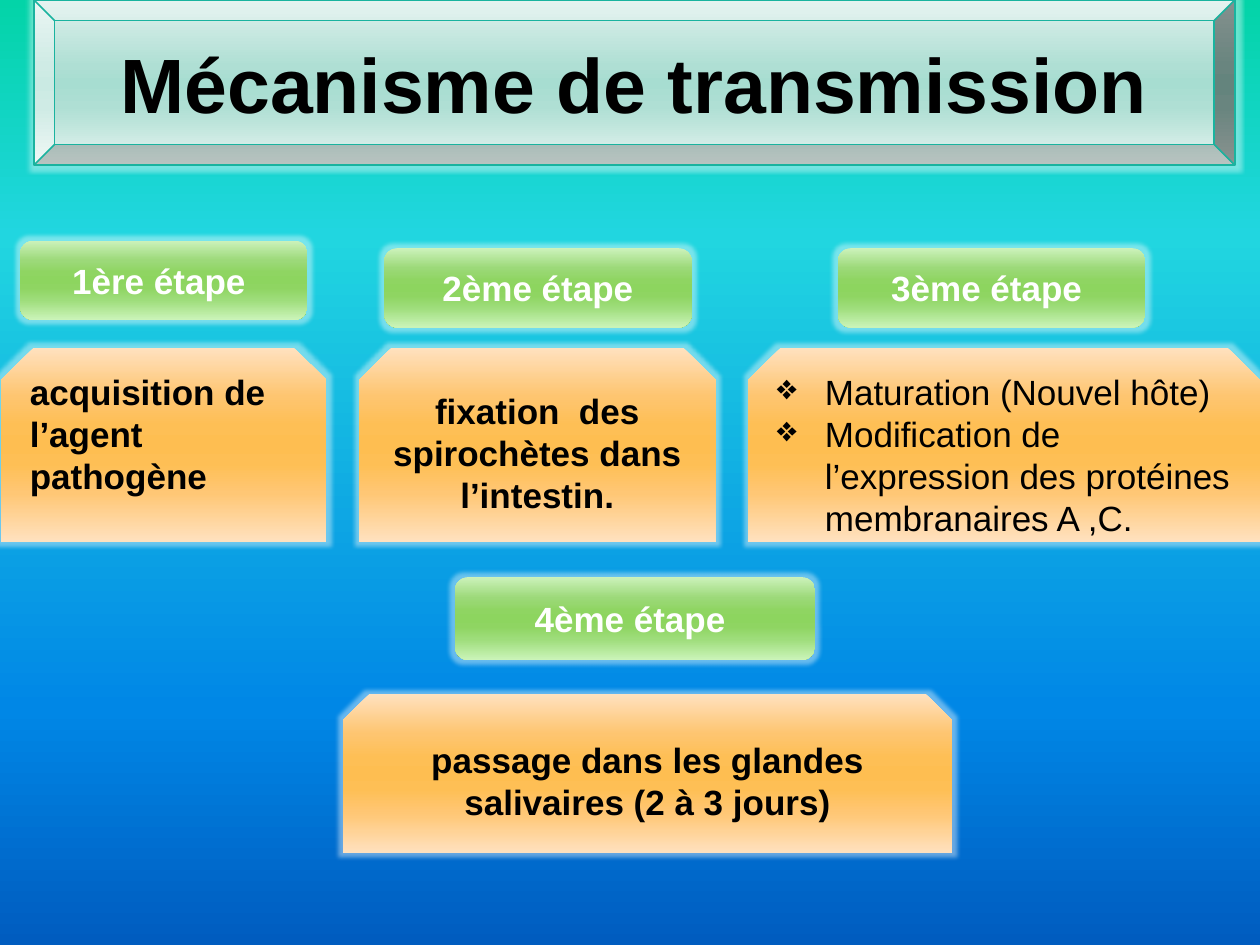
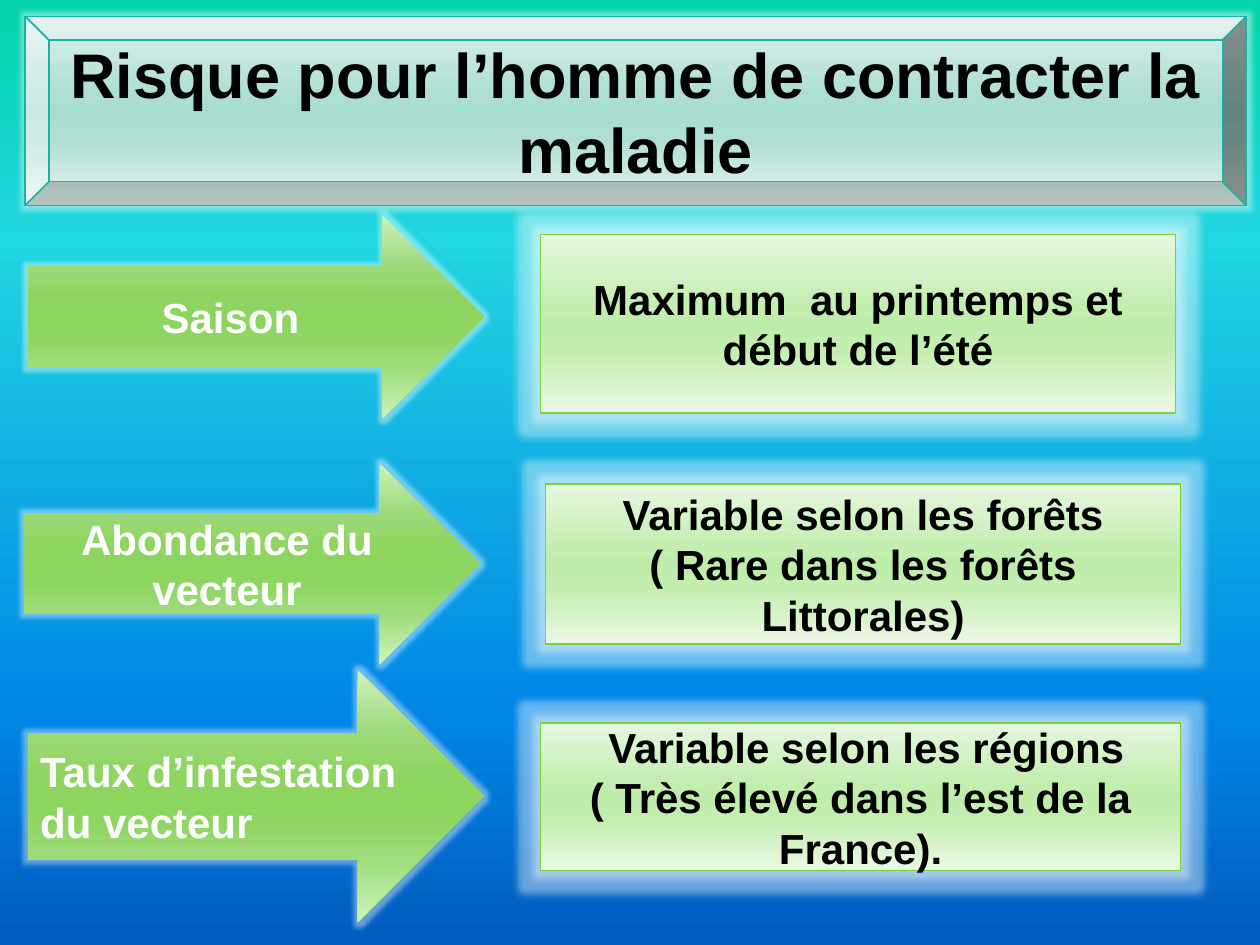
from dataclasses import dataclass

from lxml.etree import SubElement
from pptx import Presentation
from pptx.dml.color import RGBColor
from pptx.enum.shapes import MSO_SHAPE
from pptx.enum.text import MSO_ANCHOR, PP_ALIGN
from pptx.oxml.ns import qn
from pptx.util import Inches, Pt


@dataclass(frozen=True)
class Theme:
    font: str = "Arial"
    dark: str = "000000"
    light: str = "FFFFFF"
    title_line: str = "1AB39F"
    answer_line: str = "7FD13B"
    step_size: int = 20
    risk_size: int = 24
    line_width: float = 0.94
    glow_alpha: int = 40
    sky: tuple = ((0, "03D4A8"), (25, "21D6E0"), (75, "0087E6"), (100, "005CBF"))
    teal: tuple = ((0, "DFF1ED"), (40, "AFDFD4"), (50, "A7DDD1"), (65, "AFDFD4"),
                   (100, "E6F4F0"))
    green: tuple = ((0, "CCF2BB"), (25, "9CD979"), (40, "8FD562"), (50, "8DD55F"),
                    (60, "8FD562"), (75, "9EDD7B"), (100, "CBF4B9"))
    orange: tuple = ((0, "FFE1BF"), (25, "FEC570"), (40, "FEBF55"), (50, "FEBE51"),
                     (60, "FEBF55"), (75, "FFC775"), (100, "FFE1BF"))
    pale_green: tuple = ((0, "E6F7E0"), (40, "C4EEB0"), (50, "BEEDA9"), (65, "C4EEB0"),
                         (100, "ECF8E6"))


theme = Theme()


def paint_gradient(properties, stops):
    """Swap the solid fill of a property element for a top-to-bottom gradient."""
    solid = properties.find(qn("a:solidFill"))
    gradient = properties.makeelement(qn("a:gradFill"), {"rotWithShape": "1"})
    stop_list = SubElement(gradient, qn("a:gsLst"))
    for percent, color in stops:
        stop = SubElement(stop_list, qn("a:gs"), pos=str(percent * 1000))
        SubElement(stop, qn("a:srgbClr"), val=color)
    SubElement(gradient, qn("a:lin"), ang="5400000", scaled="0")
    properties.replace(solid, gradient)


def add_panel(slide, preset, box, stops, lines, size, color=theme.dark, bold=True,
              align=PP_ALIGN.CENTER, anchor=MSO_ANCHOR.MIDDLE, outline=None,
              glow=0.07, bullet=None):
    """Add a glowing gradient shape with one paragraph per line of text."""
    panel = slide.shapes.add_shape(preset, *map(Inches, box))
    panel.fill.solid()
    paint_gradient(panel.element.spPr, stops)
    if outline:
        panel.line.color.rgb = RGBColor.from_string(outline)
        panel.line.width = Pt(theme.line_width)
    else:
        panel.line.fill.background()

    panel.shadow.inherit = False
    effects = panel.element.spPr.find(qn("a:effectLst"))
    halo = SubElement(effects, qn("a:glow"), rad=str(Inches(glow)))
    halo_color = SubElement(halo, qn("a:srgbClr"), val=theme.light)
    SubElement(halo_color, qn("a:alpha"), val=str(theme.glow_alpha * 1000))

    frame = panel.text_frame
    frame.word_wrap = True
    frame.vertical_anchor = anchor
    for index, line in enumerate(lines):
        paragraph = frame.add_paragraph() if index else frame.paragraphs[0]
        paragraph.alignment = align
        if bullet:
            indent = Inches(0.38)
            layout = paragraph._p.get_or_add_pPr()
            layout.set("marL", str(indent))
            layout.set("indent", str(-indent))
            SubElement(layout, qn("a:buChar"), char=bullet)
        run = paragraph.add_run()
        run.text = line
        run.font.name = theme.font
        run.font.size = Pt(size)
        run.font.bold = bold
        run.font.color.rgb = RGBColor.from_string(color)


prs = Presentation()
prs.slide_width, prs.slide_height = Inches(10), Inches(7.5)
prs.slide_master.background.fill.solid()
paint_gradient(prs.slide_master.element.find(".//" + qn("p:bgPr")), theme.sky)

titles = [
    ("Mécanisme de transmission", (0.27, 0, 9.53, 1.31), 44),
    ("Risque pour l’homme de contracter la maladie", (0.2, 0.13, 9.69, 1.5), 36),
]
slides = []
for title, box, size in titles:
    slide = prs.slides.add_slide(prs.slide_layouts[6])
    add_panel(slide, MSO_SHAPE.BEVEL, box, theme.teal, [title], size,
              outline=theme.title_line)
    slides.append(slide)
transmission, risk = slides

# Transmission: each step label with its explanation
top_left = {"align": PP_ALIGN.LEFT, "anchor": MSO_ANCHOR.TOP}
steps = [
    ("1ère étape ", (0.16, 1.91, 2.28, 0.63), (0.01, 2.76, 2.58, 1.54),
     ["acquisition de l’agent pathogène"], top_left),
    ("2ème étape", (3.05, 1.97, 2.44, 0.63), (2.85, 2.76, 2.83, 1.54),
     ["fixation  des spirochètes dans l’intestin."], {}),
    ("3ème étape ", (6.65, 1.97, 2.44, 0.63), (5.94, 2.76, 4.06, 1.54),
     ["Maturation (Nouvel hôte)",
      "Modification de l’expression des protéines membranaires A ,C."],
     {**top_left, "bold": False, "bullet": "❖"}),
    ("4ème étape ", (3.61, 4.58, 2.86, 0.66), (2.72, 5.51, 4.84, 1.26),
     ["passage dans les glandes salivaires (2 à 3 jours)"], {}),
]
for label, label_box, detail_box, details, style in steps:
    add_panel(transmission, MSO_SHAPE.ROUNDED_RECTANGLE, label_box, theme.green,
              [label], theme.step_size, theme.light)
    add_panel(transmission, MSO_SHAPE.SNIP_2_SAME_RECTANGLE, detail_box, theme.orange,
              details, theme.step_size, **style)

# Risk: each factor arrow points at its answer
factors = [
    ("Saison", (0.22, 1.71, 3.62, 1.61), PP_ALIGN.CENTER, (4.29, 1.86, 5.04, 1.42),
     ["Maximum  au printemps et", "début de l’été"]),
    ("Abondance du vecteur", (0.19, 3.68, 3.62, 1.59), PP_ALIGN.CENTER,
     (4.33, 3.84, 5.04, 1.27),
     ["Variable selon les forêts", "( Rare dans les forêts", "Littorales)"]),
    ("Taux d’infestation du vecteur", (0.22, 5.32, 3.62, 2), PP_ALIGN.LEFT,
     (4.29, 5.74, 5.08, 1.17),
     [" Variable selon les régions", "( Très élevé dans l’est de la France)."]),
]
for factor, arrow_box, align, answer_box, answer in factors:
    add_panel(risk, MSO_SHAPE.RIGHT_ARROW, arrow_box, theme.green, [factor],
              theme.risk_size, theme.light, align=align)
    add_panel(risk, MSO_SHAPE.RECTANGLE, answer_box, theme.pale_green, answer,
              theme.risk_size, outline=theme.answer_line, glow=0.12)

prs.save("out.pptx")
